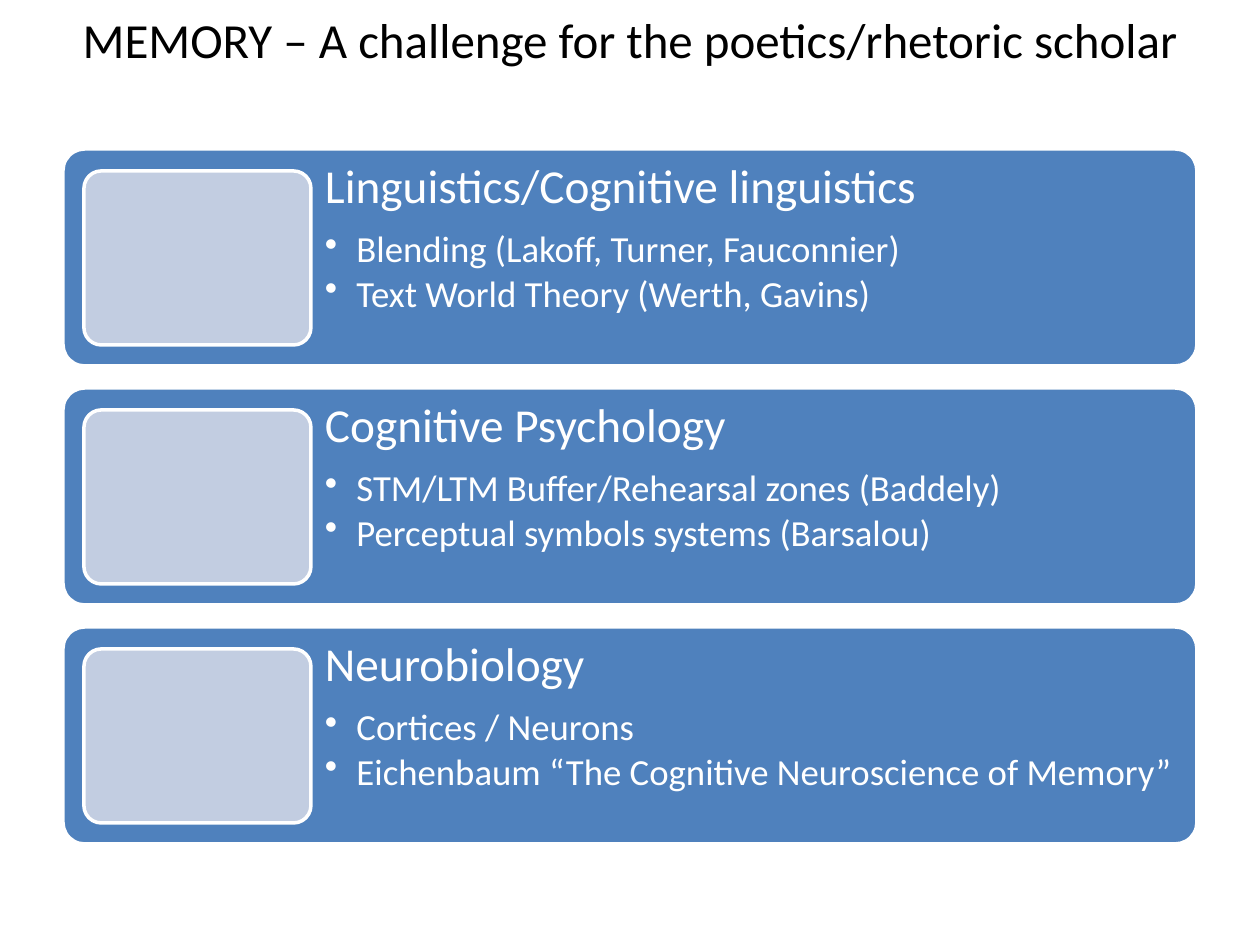
from lxml import etree
from pptx import Presentation, util as u
from pptx.dml.color import RGBColor
from pptx.enum import shapes, text
from pptx.oxml.ns import qn

PX = 914400 / 126
COLORS = {"panel": "4F81BD", "tile": "C2CDE1", "white": "FFFFFF", "black": "000000"}
TITLE = "MEMORY – A challenge for the poetics/rhetoric scholar"
FIELDS = [
    ("Linguistics/Cognitive linguistics",
     ["Blending (Lakoff, Turner, Fauconnier)", "Text World Theory (Werth, Gavins)"]),
    ("Cognitive Psychology",
     ["STM/LTM Buffer/Rehearsal zones (Baddely)", "Perceptual symbols systems (Barsalou)"]),
    ("Neurobiology",
     ["Cortices / Neurons", "Eichenbaum “The Cognitive Neuroscience of Memory”"]),
]
PANEL_TOP, PANEL_STEP = 149, 239


def px(value):
    return u.Emu(round(value * PX))


def color(name):
    return RGBColor.from_string(COLORS[name])


class SlideBuilder:
    font = "Calibri"

    def __init__(self, presentation):
        self.slide = presentation.slides.add_slide(presentation.slide_layouts[5])

    def format_runs(self, paragraph, size, color_name):
        for run in paragraph.runs:
            run.font.name = self.font
            run.font.size = u.Pt(size)
            run.font.color.rgb = color(color_name)

    def title(self, wording, left, top, width, height):
        shape = self.slide.shapes.title
        shape.left, shape.top, shape.width, shape.height = map(px, (left, top, width, height))
        frame = shape.text_frame
        frame.text = wording
        frame.vertical_anchor = text.MSO_ANCHOR.MIDDLE
        paragraph = frame.paragraphs[0]
        paragraph.alignment = text.PP_ALIGN.CENTER
        self.format_runs(paragraph, 28, "black")

    def rounded_box(self, fill, left, top, width, height):
        shape = self.slide.shapes.add_shape(
            shapes.MSO_SHAPE.ROUNDED_RECTANGLE, *map(px, (left, top, width, height)))
        shape.adjustments[0] = 0.1
        shape.shadow.inherit = False
        shape.fill.solid()
        shape.fill.fore_color.rgb = color(fill)
        shape.line.color.rgb = color("white")
        shape.line.width = u.Pt(2)

    def heading_with_bullets(self, heading, bullets, left, top, width, height):
        box = self.slide.shapes.add_textbox(*map(px, (left, top, width, height)))
        frame = box.text_frame
        frame.word_wrap = True
        frame.margin_left = frame.margin_right = px(14)
        frame.margin_top = frame.margin_bottom = px(14)
        frame.text = "\n".join([heading, *bullets])
        for index, paragraph in enumerate(frame.paragraphs):
            paragraph.alignment = text.PP_ALIGN.LEFT
            paragraph.line_spacing = 0.9
            paragraph.space_after = u.Pt(3 if index else 9.5)
            if index:
                self.add_bullet(paragraph)
            self.format_runs(paragraph, 21 if index else 27, "white")

    @staticmethod
    def add_bullet(paragraph):
        paragraph.level = 1
        properties = paragraph._p.get_or_add_pPr()
        properties.set("marL", str(u.Inches(0.25)))
        properties.set("indent", str(-u.Inches(0.25)))
        etree.SubElement(properties, qn("a:buChar")).set("char", "•")


def main():
    presentation = Presentation()
    presentation.slide_width, presentation.slide_height = px(1260), px(945)
    builder = SlideBuilder(presentation)
    builder.title(TITLE, 63, 10, 1134, 58)
    for row, (heading, bullets) in enumerate(FIELDS):
        top = PANEL_TOP + row * PANEL_STEP
        builder.rounded_box("panel", 63, top, 1134, 217)
        builder.heading_with_bullets(heading, bullets, 311, top, 886, 217)
        builder.rounded_box("tile", 84, top + 22, 227, 174)
    presentation.save("out.pptx")


if __name__ == "__main__":
    main()
